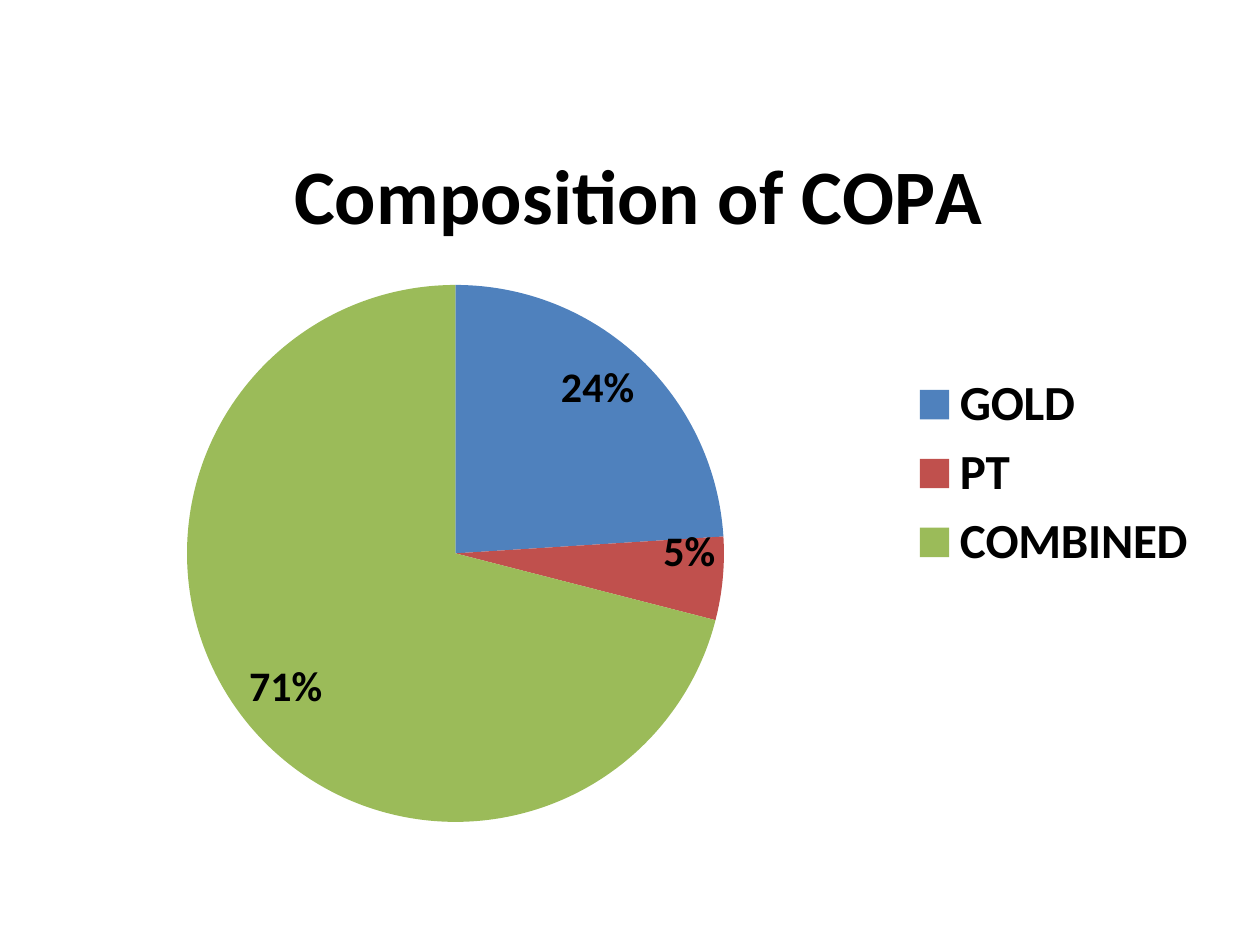
from lxml import etree
from pptx import Presentation
from pptx.chart.data import CategoryChartData
from pptx.dml.color import RGBColor
from pptx.enum.chart import XL_CHART_TYPE, XL_LABEL_POSITION, XL_LEGEND_POSITION
from pptx.oxml.ns import qn
from pptx.util import Pt

PIE = XL_CHART_TYPE.PIE
RIGHT = XL_LEGEND_POSITION.RIGHT
INSIDE = XL_LABEL_POSITION.INSIDE_END
SCALE = 914400 / 126
BOX = (64, 106, 1150, 735)
PLOT = (187, 285, 537, 537)
SHARES = [("GOLD", 24, "4F81BD"), ("PT ", 5, "C0504D"), ("COMBINED", 71, "9BBB59")]


def px(n):
    return round(n * SCALE)


def rgb(code):
    return RGBColor.from_string(code)


def style(font, size):
    font.name = "Calibri"
    font.size = Pt(size)
    font.bold = True
    font.color.rgb = rgb("000000")


def place_plot(chart):
    """Fix the pie's inner area as fractions of the chart box."""
    area = chart._chartSpace.chart.plotArea
    for old in area.findall(qn("c:layout")):
        area.remove(old)
    layout = etree.Element(qn("c:layout"))
    area.insert(0, layout)
    manual = etree.SubElement(layout, qn("c:manualLayout"))
    left, top, wide, high = BOX
    x, y, w, h = PLOT
    values = [("layoutTarget", "inner"), ("xMode", "edge"), ("yMode", "edge"),
              ("x", (x - left) / wide), ("y", (y - top) / high),
              ("w", w / wide), ("h", h / high)]
    for tag, val in values:
        text = val if isinstance(val, str) else f"{val:.4f}"
        etree.SubElement(manual, qn(f"c:{tag}")).set("val", text)


def add_title(chart, text):
    chart.has_title = True
    frame = chart.chart_title.text_frame
    frame.text = text
    style(frame.paragraphs[0].runs[0].font, 44)
    chart.chart_title.include_in_layout = False


def add_legend(chart):
    chart.has_legend = True
    chart.legend.position = RIGHT
    chart.legend.include_in_layout = False
    style(chart.legend.font, 28)


def add_labels(plot):
    plot.has_data_labels = True
    labels = plot.data_labels
    labels.show_percentage = True
    labels.show_value = False
    labels.number_format = "0%"
    labels.number_format_is_linked = False
    labels.position = INSIDE
    style(labels.font, 24)


def add_pie(slide):
    names, values, colours = zip(*SHARES)
    data = CategoryChartData()
    data.categories = names
    data.add_series("Series 1", values)
    chart = slide.shapes.add_chart(PIE, *map(px, BOX), data).chart
    plot = chart.plots[0]
    plot.vary_by_categories = True
    for i, code in enumerate(colours):
        fill = plot.series[0].points[i].format.fill
        fill.solid()
        fill.fore_color.rgb = rgb(code)
    add_title(chart, "Composition of COPA")
    add_legend(chart)
    add_labels(plot)
    place_plot(chart)


def main():
    deck = Presentation()
    deck.slide_width, deck.slide_height = px(1260), px(945)
    add_pie(deck.slides.add_slide(deck.slide_layouts[6]))
    deck.save("out.pptx")


if __name__ == "__main__":
    main()
